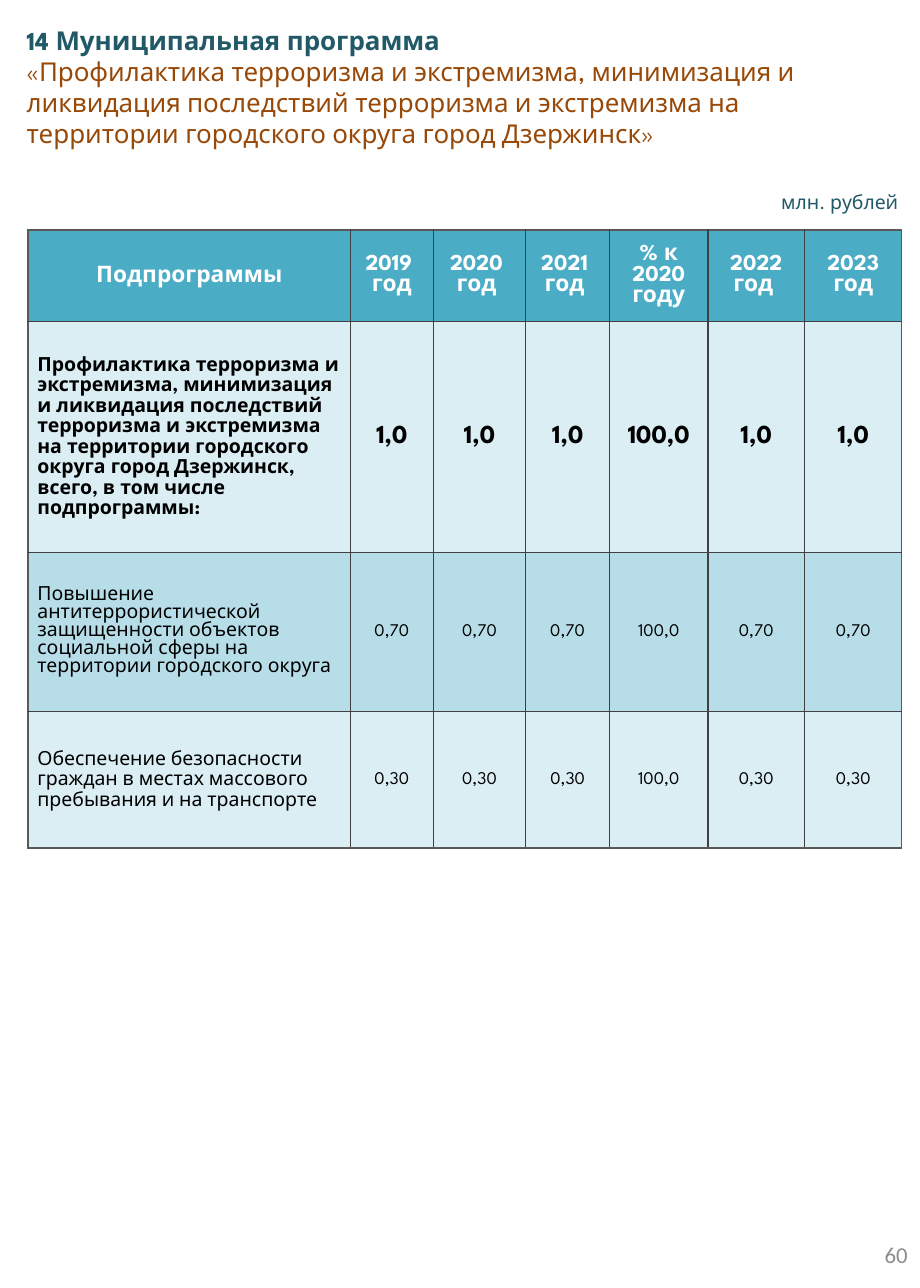
from lxml import etree
from pptx import Presentation
from pptx.dml.color import RGBColor
from pptx.enum.text import MSO_ANCHOR, MSO_AUTO_SIZE, PP_ALIGN
from pptx.oxml.ns import qn
from pptx.util import Inches, Pt

LEFT, CENTER, RIGHT = PP_ALIGN.LEFT, PP_ALIGN.CENTER, PP_ALIGN.RIGHT
TOP, MIDDLE = MSO_ANCHOR.TOP, MSO_ANCHOR.MIDDLE
GROW, FIXED = MSO_AUTO_SIZE.SHAPE_TO_FIT_TEXT, MSO_AUTO_SIZE.NONE
FONT = "League Spartan"
COLORS = {
    "teal": "215968", "brown": "984807", "gray": "8C8C8C",
    "white": "FFFFFF", "black": "000000",
    "header": "4BACC6", "light": "DBEEF4", "medium": "B7DEE8",
    "inner": "404040", "outer": "595959",
}
COLUMN_WIDTHS = [2.76, 0.71, 0.79, 0.72, 0.84, 0.83, 0.83]
ROW_HEIGHTS = [0.78, 1.98, 1.36, 1.17]
ROWS = [
    ["Подпрограммы", "2019 \nгод", "2020 \nгод ", "2021 \nгод ",
     "% к 2020 году", "2022 год ", "2023 год"],
    ["Профилактика терроризма и экстремизма, минимизация и ликвидация "
     "последствий терроризма и экстремизма на территории городского округа "
     "город Дзержинск, всего, в том числе подпрограммы:",
     "1,0", "1,0", "1,0", "100,0", "1,0", "1,0"],
    ["Повышение антитеррористической защищенности объектов социальной сферы "
     "на территории городского округа",
     "0,70", "0,70", "0,70", "100,0", "0,70", "0,70"],
    ["Обеспечение безопасности граждан в местах массового пребывания "
     "и на транспорте",
     "0,30", "0,30", "0,30", "100,0", "0,30", "0,30"],
]
ROW_STYLES = [
    {"fill": "header", "color": "white", "bold": True, "sizes": (14, 14), "spacing": 1.15},
    {"fill": "light", "color": "black", "bold": True, "sizes": (12, 16), "spacing": 1.15},
    {"fill": "medium", "color": "black", "bold": False, "sizes": (12, 11), "spacing": 1.0},
    {"fill": "light", "color": "black", "bold": False, "sizes": (12, 11), "spacing": 1.15},
]


def write_paragraph(p, text, color, align=LEFT, spacing=1.0, **font):
    """Write one formatted run into a paragraph."""
    p.alignment = align
    p.line_spacing = spacing
    r = p.add_run()
    r.text = text
    for name, value in {"name": FONT, "bold": False, **font}.items():
        setattr(r.font, name, value)
    r.font.color.rgb = RGBColor.from_string(COLORS[color])


def add_text(s, box, paragraphs, anchor=TOP, auto_size=GROW, insets=(0.1, 0.05)):
    """Add a wrapping text box with one format dict per paragraph."""
    tf = s.shapes.add_textbox(*map(Inches, box)).text_frame
    side, edge = map(Inches, insets)
    layout = {
        "word_wrap": True, "vertical_anchor": anchor, "auto_size": auto_size,
        "margin_left": side, "margin_right": side,
        "margin_top": edge, "margin_bottom": edge,
    }
    for name, value in layout.items():
        setattr(tf, name, value)
    for i, paragraph in enumerate(paragraphs):
        p = tf.add_paragraph() if i else tf.paragraphs[0]
        write_paragraph(p, **paragraph)


def set_borders(cell, row, col):
    """Draw cell borders, lighter along the table's outer edge."""
    outer = {
        "L": col == 0, "R": col == len(COLUMN_WIDTHS) - 1,
        "T": row == 0, "B": row == len(ROWS) - 1,
    }
    tc_pr = cell._tc.get_or_add_tcPr()
    for side, is_outer in outer.items():
        ln = etree.SubElement(tc_pr, qn(f"a:ln{side}"), w=str(Pt(1)))
        fill = etree.SubElement(ln, qn("a:solidFill"))
        color = COLORS["outer" if is_outer else "inner"]
        etree.SubElement(fill, qn("a:srgbClr"), val=color)


def fill_cell(cell, row, col, text, style):
    """Format one table cell and write its text."""
    set_borders(cell, row, col)
    cell.fill.solid()
    cell.fill.fore_color.rgb = RGBColor.from_string(COLORS[style["fill"]])
    is_number = row > 0 and col > 0
    side = Inches(0.01 if is_number else 0.08)
    layout = {
        "margin_left": side, "margin_right": side,
        "margin_top": Inches(0.01 if is_number else 0),
        "margin_bottom": 0, "vertical_anchor": MIDDLE,
    }
    for name, value in layout.items():
        setattr(cell, name, value)
    tf = cell.text_frame
    for i, line in enumerate(text.split("\n")):
        p = tf.add_paragraph() if i else tf.paragraphs[0]
        write_paragraph(
            p, line, style["color"],
            align=LEFT if row and not col else CENTER,
            spacing=1.0 if col else style["spacing"],
            size=Pt(style["sizes"][col > 0]), bold=style["bold"])


def add_budget_table(s):
    """Add the table of subprogramme spending by year."""
    table = s.shapes.add_table(
        len(ROWS), len(COLUMN_WIDTHS), Inches(0.24), Inches(1.97),
        Inches(sum(COLUMN_WIDTHS)), Inches(sum(ROW_HEIGHTS))).table
    for column, width in zip(table.columns, COLUMN_WIDTHS):
        column.width = Inches(width)
    for row, height in zip(table.rows, ROW_HEIGHTS):
        row.height = Inches(height)
    for row, (texts, style) in enumerate(zip(ROWS, ROW_STYLES)):
        for col, text in enumerate(texts):
            fill_cell(table.cell(row, col), row, col, text, style)


def main():
    """Build the programme slide and save it."""
    prs = Presentation()
    prs.slide_width, prs.slide_height = Pt(567), Pt(793.75)
    s = prs.slides.add_slide(prs.slide_layouts[6])
    add_text(s, (6.41, 1.57, 1.39, 0.31), [
        {"text": "млн. рублей", "color": "teal", "size": Pt(12), "align": RIGHT}],
        insets=(0.11, 0.06))
    add_budget_table(s)
    add_text(s, (0.13, 0.16, 7.58, 1.18), [
        {"text": "14 Муниципальная программа", "color": "teal",
         "size": Pt(16), "bold": True},
        {"text": "«Профилактика терроризма и экстремизма, минимизация и "
                 "ликвидация последствий терроризма и экстремизма на "
                 "территории городского округа город Дзержинск»",
         "color": "brown", "size": Pt(16)}])
    add_text(s, (6.04, 10.44, 1.84, 0.59), [
        {"text": "60", "color": "gray", "size": Pt(14), "name": "Calibri",
         "align": RIGHT}], MIDDLE, FIXED, (0.11, 0.06))
    prs.save("out.pptx")


if __name__ == "__main__":
    main()
